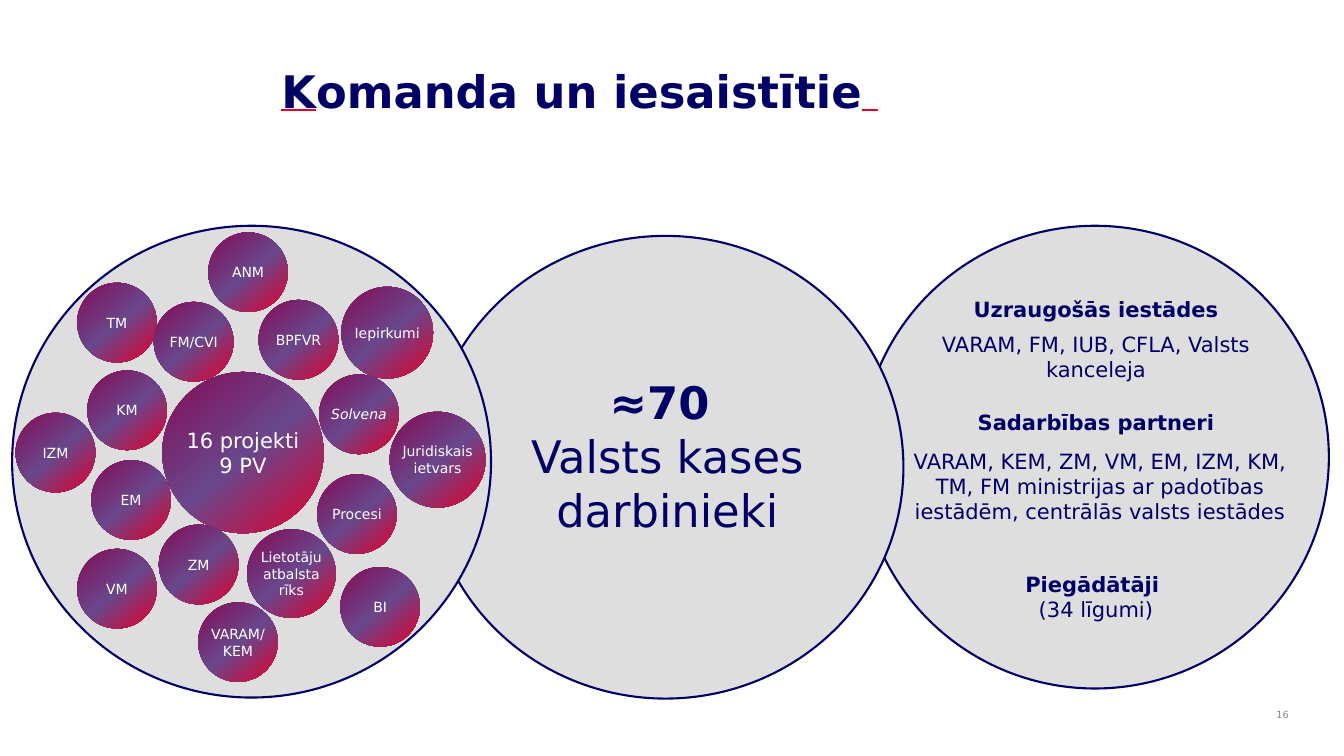
from lxml import etree
from pptx import Presentation
from pptx.dml.color import RGBColor
from pptx.enum.shapes import MSO_SHAPE
from pptx.enum.text import MSO_ANCHOR, PP_ALIGN
from pptx.oxml import parse_xml
from pptx.oxml.ns import nsdecls, qn
from pptx.util import Inches, Pt

OVAL = MSO_SHAPE.OVAL
TOP, MIDDLE = MSO_ANCHOR.TOP, MSO_ANCHOR.MIDDLE
LEFT, CENTER, RIGHT = PP_ALIGN.LEFT, PP_ALIGN.CENTER, PP_ALIGN.RIGHT
FONT = "DejaVu Sans"
COLORS = {
    "navy": "000066",
    "disc": "DEDEDE",
    "white": "FFFFFF",
    "gray": "898989",
    "plum": "840B55",
    "violet": "69478C",
    "red": "E5002B",
}
GRADIENT = [(0, "plum"), (52, "violet"), (100, "red")]
SMALL = 0.79
HUB = ("16 projekti\v9 PV", 2.29, 2.25, 1.6)
BUBBLES = [
    ("ANM", 2.34, 0.46, SMALL),
    ("BPFVR", 2.84, 1.13, SMALL),
    ("Procesi", 3.42, 2.86, SMALL),
    ("Solvena", 3.44, 1.87, SMALL),
    ("Juridiskais\vietvars", 4.22, 2.32, 0.95),
    ("Iepirkumi", 3.72, 1.06, 0.91),
    ("BI", 3.65, 3.78, SMALL),
    ("Lietotāju\vatbalsta\vrīks", 2.77, 3.45, 0.88),
    ("VARAM/\vKEM", 2.24, 4.13, SMALL),
    ("ZM", 1.85, 3.36, SMALL),
    ("VM", 1.04, 3.6, SMALL),
    ("EM", 1.18, 2.72, SMALL),
    ("IZM", 0.43, 2.25, SMALL),
    ("KM", 1.14, 1.83, SMALL),
    ("TM", 1.04, 0.96, SMALL),
    ("FM/CVI", 1.8, 1.15, SMALL),
]
ITALIC = {"Solvena"}
PARTNER_TEXTS = [
    (0.63, 0.65, 3.4, 0.35, [("Uzraugošās iestādes", True)]),
    (0.61, 1.0, 3.44, 0.61, [("VARAM, FM, IUB, CFLA, Valsts kanceleja", False)]),
    (0.63, 1.77, 3.4, 0.35, [("Sadarbības partneri", True)]),
    (0.38, 2.16, 3.98, 0.86, [
        ("VARAM, KEM, ZM, VM, EM, IZM, KM, TM, FM ministrijas ar padotības "
         "iestādēm, centrālās valsts iestādes", False)]),
    (0.63, 3.38, 3.4, 0.61, [("Piegādātāji ", True), ("(34 līgumi)", False)]),
]


def rgb(name):
    """Return the named colour."""
    return RGBColor.from_string(COLORS[name])


def style_run(r, size, color, bold=False, italic=False):
    """Format one run."""
    r.font.name = FONT
    r.font.size = Pt(size)
    r.font.bold = bold
    r.font.italic = italic
    r.font.color.rgb = rgb(color)


def add_oval(shapes, x, y, w, h):
    """Add a shadowless oval."""
    sp = shapes.add_shape(OVAL, Inches(x), Inches(y), Inches(w), Inches(h))
    sp.shadow.inherit = False
    return sp


def add_disc(shapes, box):
    """Add a large outlined disc that fills the box."""
    sp = add_oval(shapes, *box)
    sp.fill.solid()
    sp.fill.fore_color.rgb = rgb("disc")
    sp.line.color.rgb = rgb("navy")
    sp.line.width = Pt(1.5)


def add_text(shapes, box, lines, size, color="navy", align=CENTER, anchor=TOP):
    """Add a text box with lines given as (text, bold) pairs."""
    sp = shapes.add_textbox(*(Inches(v) for v in box))
    tf = sp.text_frame
    tf.word_wrap = True
    tf.vertical_anchor = anchor
    p = tf.paragraphs[0]
    p.alignment = align
    for i, (text, bold) in enumerate(lines):
        if i:
            p.add_line_break()
        r = p.add_run()
        r.text = text
        style_run(r, size, color, bold)


def fill_gradient(sp):
    """Give the shape the three-colour gradient."""
    sp.fill.gradient()
    grad = sp.fill._xPr.find(qn("a:gradFill"))
    stops = grad.find(qn("a:gsLst"))
    for gs in list(stops):
        stops.remove(gs)
    for pos, name in GRADIENT:
        gs = etree.SubElement(stops, qn("a:gs"), pos=str(pos * 1000))
        etree.SubElement(gs, qn("a:srgbClr"), val=COLORS[name])
    lin = grad.find(qn("a:lin"))
    lin.set("ang", str(50 * 60000))
    lin.set("scaled", "0")


def add_bubble(shapes, box, bubble, size):
    """Add a gradient circle centred at an offset within the box."""
    text, cx, cy, d = bubble
    sp = add_oval(shapes, box[0] + cx - d / 2, box[1] + cy - d / 2, d, d)
    fill_gradient(sp)
    sp.line.fill.background()
    tf = sp.text_frame
    tf.margin_left = tf.margin_right = tf.margin_top = tf.margin_bottom = 0
    tf.word_wrap = False
    tf.vertical_anchor = MIDDLE
    p = tf.paragraphs[0]
    p.text = text
    p.alignment = CENTER
    for r in p.runs:
        style_run(r, size, "white", italic=text in ITALIC)


def add_title(s, box):
    """Place the title with red underlined ends."""
    sp = s.shapes.title
    sp.left, sp.top, sp.width, sp.height = (Inches(v) for v in box)
    tf = sp.text_frame
    tf.vertical_anchor = TOP
    tf.margin_top = Inches(0.09)
    p = tf.paragraphs[0]
    p.alignment = LEFT
    for text, underline in [("K", True), ("omanda un iesaistītie", False), (" ", True)]:
        r = p.add_run()
        r.text = text
        style_run(r, 32, "navy", bold=True)
        r.font.underline = underline
        if underline:
            u_fill = parse_xml(
                f'<a:uFill {nsdecls("a")}><a:solidFill>'
                f'<a:srgbClr val="{COLORS["red"]}"/></a:solidFill></a:uFill>')
            r.font._element.find(qn("a:latin")).addprevious(u_fill)


def add_partners(s, box):
    """Build the right disc with supervisors, partners and suppliers."""
    add_disc(s.shapes, box)
    for dx, dy, w, h, lines in PARTNER_TEXTS:
        add_text(s.shapes, (box[0] + dx, box[1] + dy, w, h), lines, 15)


def add_staff(s, box):
    """Build the middle disc with the staff count."""
    add_disc(s.shapes, box)
    lines = [("≈70 ", True), ("Valsts kases darbinieki", False)]
    add_text(s.shapes, (box[0] + 0.55, box[1] + 1.33, 3.66, 1.72), lines, 32)


def add_projects(s, box):
    """Build the left disc with the project hub and its bubbles."""
    add_disc(s.shapes, box)
    group = s.shapes.add_group_shape()
    add_bubble(group.shapes, box, HUB, 15)
    for bubble in BUBBLES:
        add_bubble(group.shapes, box, bubble, 10)


def main():
    """Build and save the slide."""
    prs = Presentation()
    prs.slide_width, prs.slide_height = Inches(13.33), Inches(7.5)
    s = prs.slides.add_slide(prs.slide_layouts[5])
    add_title(s, (2.69, 0.54, 7.55, 0.8))
    add_partners(s, (8.54, 2.24, 4.64, 4.59))
    add_staff(s, (4.24, 2.34, 4.72, 4.59))
    add_projects(s, (0.12, 2.24, 4.75, 4.68))
    add_text(s.shapes, (12.44, 6.92, 0.44, 0.33), [("16", False)], 7, "gray", RIGHT, MIDDLE)
    prs.save("out.pptx")


if __name__ == "__main__":
    main()
